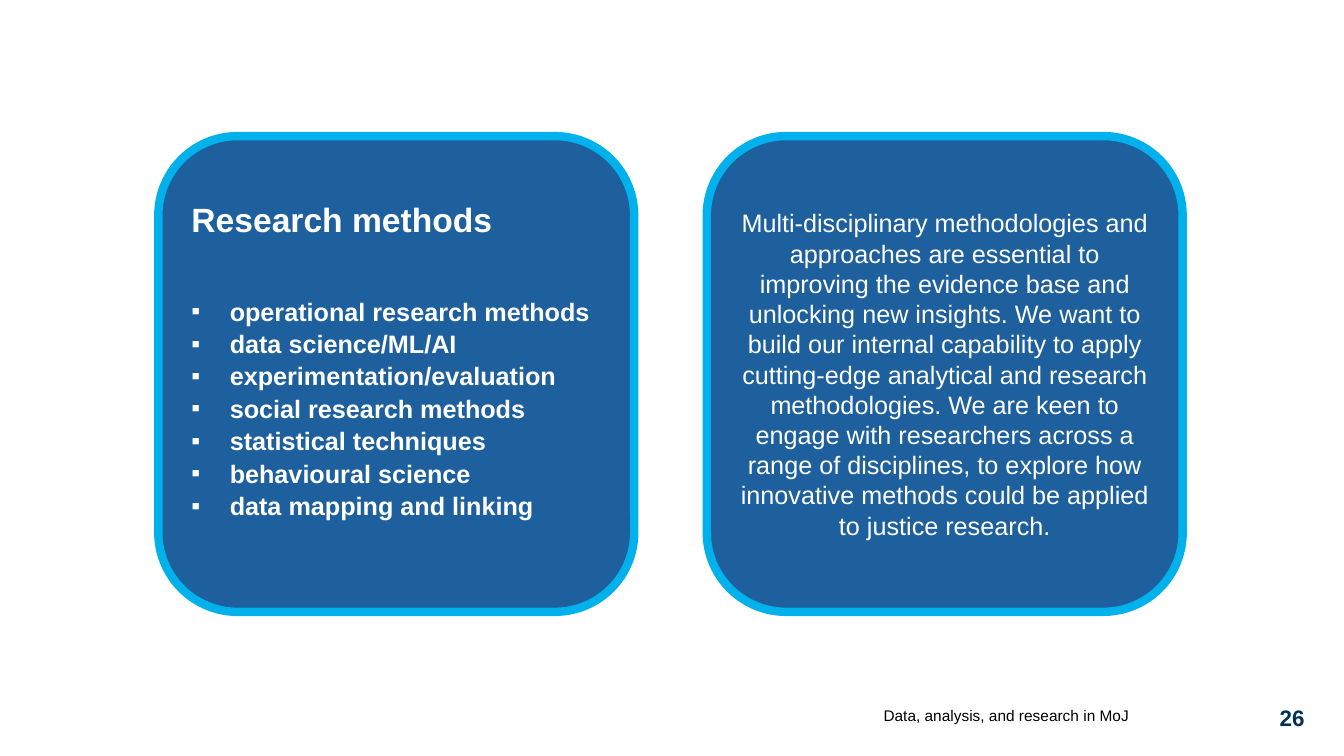
import pptx
import pptx.dml.color
import pptx.enum.shapes
import pptx.enum.text
import pptx.oxml
import pptx.oxml.ns
import pptx.util

Inches = pptx.util.Inches
Pt = pptx.util.Pt
ALIGN = pptx.enum.text.PP_ALIGN
ANCHOR = pptx.enum.text.MSO_ANCHOR

WHITE, BLACK, NAVY = "FFFFFF", "000000", "003057"
PANEL_BLUE, BORDER_BLUE = "1D609D", "00B1EB"

PANEL_SIZE = 4.72
PANEL_TOP = 1.35
PANEL_LEFTS = (1.57, 7.01)

METHODS = [
    "operational research methods",
    "data science/ML/AI",
    "experimentation/evaluation",
    "social research methods",
    "statistical techniques",
    "behavioural science",
    "data mapping and linking",
]
APPROACH = (
    "Multi-disciplinary methodologies and approaches are essential to improving "
    "the evidence base and unlocking new insights. We want to build our internal "
    "capability to apply cutting-edge analytical and research methodologies. We are "
    "keen to engage with researchers across a range of disciplines, to explore how "
    "innovative methods could be applied to justice research."
)


def color(value):
    return pptx.dml.color.RGBColor.from_string(value)


def add_bullet(paragraph, indent=0.38, tab=0.25):
    properties = paragraph._p.get_or_add_pPr()
    properties.set("marL", str(Inches(indent)))
    properties.set("indent", str(-Inches(indent)))
    namespace = pptx.oxml.ns.nsdecls("a")
    for xml in (
        f'<a:buFont {namespace} typeface="Arial"/>',
        f'<a:buChar {namespace} char="▪"/>',
        f'<a:tabLst {namespace}><a:tab pos="{Inches(tab)}" algn="l"/></a:tabLst>',
    ):
        properties.append(pptx.oxml.parse_xml(xml))


def write(frame, text, size=18, fill=WHITE, bold=False, align=ALIGN.LEFT,
          line_spacing=None, space_before=None, bullet=False):
    """Fill the first paragraph of the frame, or add one after it."""
    paragraph = frame.paragraphs[0]
    if paragraph.runs:
        paragraph = frame.add_paragraph()
    if bullet:
        add_bullet(paragraph)
    paragraph.alignment = align
    if line_spacing:
        paragraph.line_spacing = line_spacing
    if space_before:
        paragraph.space_before = Pt(space_before)
    run = paragraph.add_run()
    run.text = text
    run.font.name = "Arial"
    run.font.size = Pt(size)
    run.font.bold = bold
    run.font.color.rgb = color(fill)


def add_panel(slide, left, top, size):
    panel = slide.shapes.add_shape(
        pptx.enum.shapes.MSO_SHAPE.ROUNDED_RECTANGLE,
        Inches(left), Inches(top), Inches(size), Inches(size))
    panel.shadow.inherit = False
    panel.fill.solid()
    panel.fill.fore_color.rgb = color(PANEL_BLUE)
    panel.line.color.rgb = color(BORDER_BLUE)
    panel.line.width = Pt(6)
    frame = panel.text_frame
    frame.word_wrap = True
    frame.vertical_anchor = ANCHOR.MIDDLE
    return frame


def add_methods_panel(slide, left, top, size):
    frame = add_panel(slide, left, top, size)
    frame.margin_bottom = Inches(0.36)
    write(frame, "Research methods", size=24, bold=True, line_spacing=1.07)
    for index, method in enumerate(METHODS):
        write(frame, method, bold=True, line_spacing=1.07, bullet=True,
              space_before=39 if index == 0 else None)


def add_approach_panel(slide, left, top, size):
    write(add_panel(slide, left, top, size), APPROACH, align=ALIGN.CENTER)


def add_label(slide, left, top, width, height, text, anchor=ANCHOR.TOP, **text_format):
    box = slide.shapes.add_textbox(
        Inches(left), Inches(top), Inches(width), Inches(height))
    frame = box.text_frame
    frame.word_wrap = True
    frame.vertical_anchor = anchor
    frame.margin_left = frame.margin_right = 0
    frame.margin_top = frame.margin_bottom = 0
    write(frame, text, **text_format)


def add_footer(slide, left, top):
    add_label(slide, left, top, 3.11, 0.36, "Data, analysis, and research in MoJ",
              anchor=ANCHOR.MIDDLE, size=11, fill=BLACK, align=ALIGN.RIGHT)
    add_label(slide, left + 4.53, top + 0.07, 0.39, 0.28, "26",
              size=16, fill=NAVY, bold=True, align=ALIGN.CENTER)


def main():
    presentation = pptx.Presentation()
    presentation.slide_width = Inches(13.33)
    presentation.slide_height = Inches(7.5)
    slide = presentation.slides.add_slide(presentation.slide_layouts[6])

    # Footer text and page number
    add_footer(slide, 8.09, 6.92)

    # Two panels side by side
    add_methods_panel(slide, PANEL_LEFTS[0], PANEL_TOP, PANEL_SIZE)
    add_approach_panel(slide, PANEL_LEFTS[1], PANEL_TOP, PANEL_SIZE)

    presentation.save("out.pptx")


if __name__ == "__main__":
    main()
